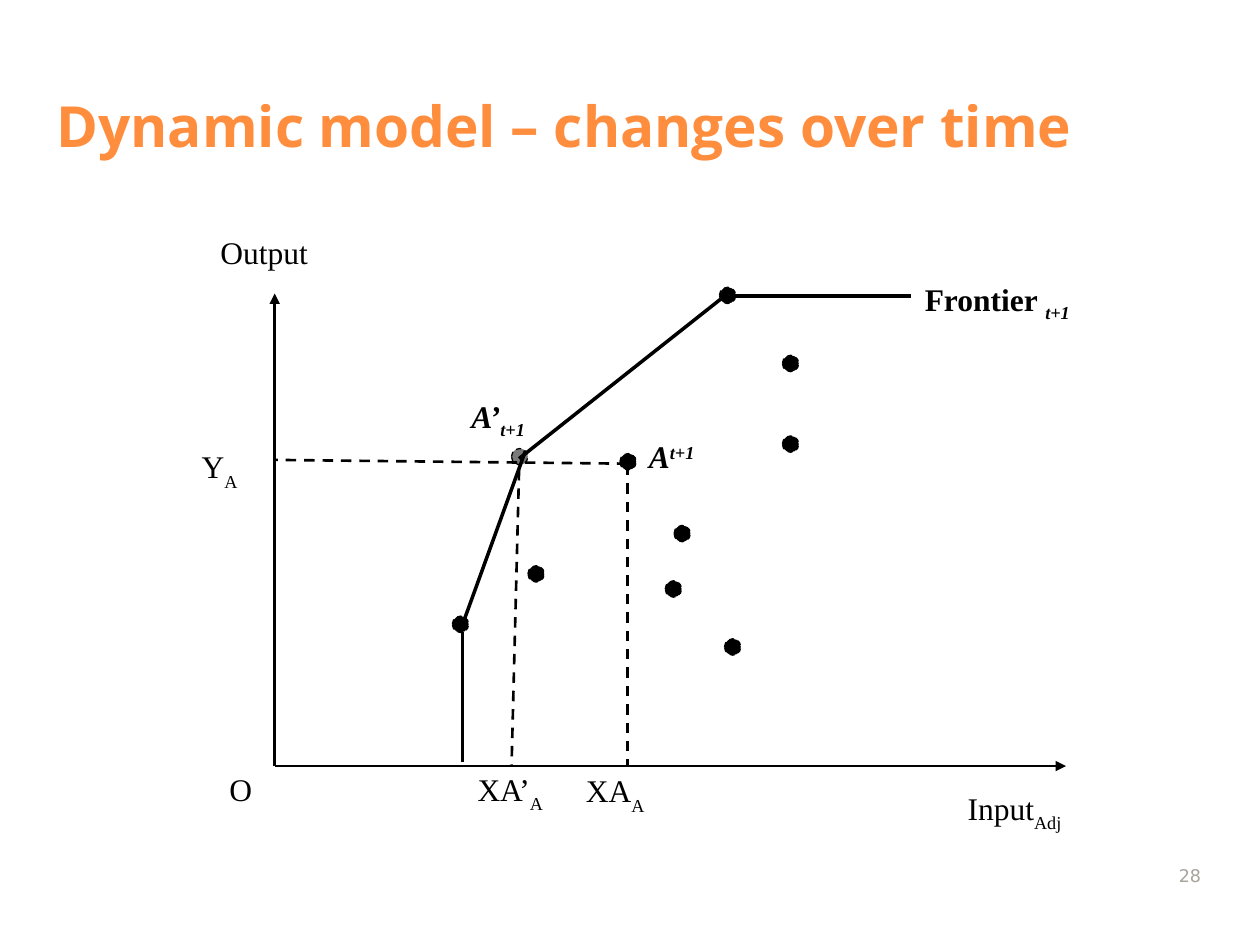
from lxml import etree
from pptx import Presentation
from pptx.dml.color import RGBColor
from pptx.enum.dml import MSO_LINE
from pptx.enum.shapes import MSO_CONNECTOR, MSO_SHAPE
from pptx.enum.text import MSO_ANCHOR, PP_ALIGN
from pptx.oxml.ns import qn
from pptx.util import Inches, Pt

STRAIGHT = MSO_CONNECTOR.STRAIGHT
OVAL = MSO_SHAPE.OVAL
DASH = MSO_LINE.DASH
TOP, BOTTOM = MSO_ANCHOR.TOP, MSO_ANCHOR.BOTTOM
LEFT, RIGHT = PP_ALIGN.LEFT, PP_ALIGN.RIGHT

BLACK = RGBColor(0x00, 0x00, 0x00)
ORANGE = RGBColor(0xFF, 0x8D, 0x3E)
GRAY = RGBColor(0xA8, 0xA4, 0x9B)

TITLE = {"name": "Open Sans", "size": Pt(32.4), "bold": True}
LABEL = {"name": "Times New Roman", "size": Pt(18)}
BOLD = {**LABEL, "bold": True}
BOLD_ITALIC = {**BOLD, "italic": True}
NUMBER = {"name": "DejaVu Sans", "size": Pt(10)}

DOT_SIZE = 0.13


class SlideBuilder:
    """Holds the slide and draws each kind of element in its style."""

    def __init__(self, slide):
        self.shapes = slide.shapes

    def text(self, box, runs, color=BLACK, anchor=TOP, align=LEFT, insets=(0.1, 0.05)):
        """Add a text box; runs are (text, format, baseline percent)."""
        shape = self.shapes.add_textbox(*map(Inches, box))
        frame = shape.text_frame
        horizontal, vertical = map(Inches, insets)
        frame_format = {
            "word_wrap": True, "vertical_anchor": anchor,
            "margin_left": horizontal, "margin_right": horizontal,
            "margin_top": vertical, "margin_bottom": vertical,
        }
        for key, value in frame_format.items():
            setattr(frame, key, value)
        paragraph = frame.paragraphs[0]
        paragraph.alignment = align
        for content, font_format, baseline in runs:
            run = paragraph.add_run()
            run.text = content
            for key, value in font_format.items():
                setattr(run.font, key, value)
            run.font.color.rgb = color
            if baseline:
                run.font._element.set("baseline", str(baseline * 1000))

    def label(self, box, *runs):
        self.text(box, runs, insets=(0.07, 0.03))

    def line(self, start, end, width, dashed=False, arrow=False):
        ends = map(Inches, (*start, *end))
        connector = self.shapes.add_connector(STRAIGHT, *ends)
        connector.line.color.rgb = BLACK
        connector.line.width = Pt(width)
        if dashed:
            connector.line.dash_style = DASH
        if arrow:
            outline = connector.line._get_or_add_ln()
            etree.SubElement(outline, qn("a:tailEnd"), type="triangle")
        etree.SubElement(connector._element.spPr, qn("a:effectLst"))

    def dot(self, left, top, opacity=100):
        shape = self.shapes.add_shape(
            OVAL, *map(Inches, (left, top, DOT_SIZE, DOT_SIZE)))
        shape.shadow.inherit = False
        shape.fill.solid()
        shape.fill.fore_color.rgb = BLACK
        shape.line.color.rgb = BLACK
        shape.line.width = Pt(0.75)
        shape.line.dash_style = DASH
        if opacity < 100:
            color = shape._element.spPr.find(qn("a:solidFill"))[0]
            etree.SubElement(color, qn("a:alpha"), val=str(opacity * 1000))


def main():
    presentation = Presentation()
    presentation.slide_width = Inches(10)
    presentation.slide_height = Inches(7.5)
    slide = presentation.slides.add_slide(presentation.slide_layouts[6])
    builder = SlideBuilder(slide)

    # Title
    builder.text((0.35, 0.52, 9.29, 0.79),
                 [("Dynamic model – changes over time", TITLE, 0)],
                 color=ORANGE, anchor=BOTTOM)

    # Axes
    origin = (2.18, 6.08)
    for axis_end in ((8.46, 6.08), (2.18, 2.33)):
        builder.line(origin, axis_end, 1.5, arrow=True)

    # Frontier segments
    for start, end in (
        ((3.67, 6.05), (3.67, 5.02)),
        ((3.67, 4.96), (4.17, 3.58)),
        ((4.12, 3.64), (5.75, 2.35)),
        ((5.72, 2.35), (7.23, 2.35)),
    ):
        builder.line(start, end, 2)

    # Projections onto the axes
    for start, end in (
        ((4.98, 3.69), (4.98, 6.09)),
        ((4.98, 3.68), (2.18, 3.65)),
        ((4.12, 3.73), (4.06, 6.08)),
    ):
        builder.line(start, end, 1.5, dashed=True)

    # Observed points, then the projected point A’
    for left, top in (
        (3.59, 4.89), (4.19, 4.49), (6.21, 3.46), (5.75, 5.07), (4.92, 3.6),
        (6.21, 2.82), (5.71, 2.28), (5.35, 4.17), (5.28, 4.61),
    ):
        builder.dot(left, top)
    builder.dot(4.06, 3.56, opacity=52)

    # Axis labels
    builder.label((1.68, 1.82, 1.17, 0.51), ("Output", LABEL, 0))
    builder.label((1.75, 6.08, 0.54, 0.44), ("O", LABEL, 0))
    for box, name, subscript in (
        ((7.61, 6.23, 1.17, 0.44), "Input", "Adj"),
        ((1.53, 3.52, 0.76, 0.59), "Y", "A"),
        ((4.58, 6.09, 0.9, 0.44), "XA", "A"),
        ((3.72, 6.08, 0.86, 0.44), "XA’", "A"),
    ):
        builder.label(box, (name, LABEL, 0), (subscript, LABEL, -30))

    # Frontier and point labels
    for box, name, name_format, baseline in (
        ((7.27, 2.19, 1.54, 0.44), "Frontier ", BOLD, -25),
        ((5.08, 3.44, 0.78, 0.47), "A", BOLD_ITALIC, 30),
        ((3.67, 3.12, 0.62, 0.44), "A’", BOLD_ITALIC, -25),
    ):
        builder.label(box, (name, name_format, 0), ("t+1", BOLD_ITALIC, baseline))

    # Slide number
    builder.text((9.13, 6.68, 0.5, 0.4), [("28", NUMBER, 0)],
                 color=GRAY, anchor=BOTTOM, align=RIGHT)

    presentation.save("out.pptx")


if __name__ == "__main__":
    main()
